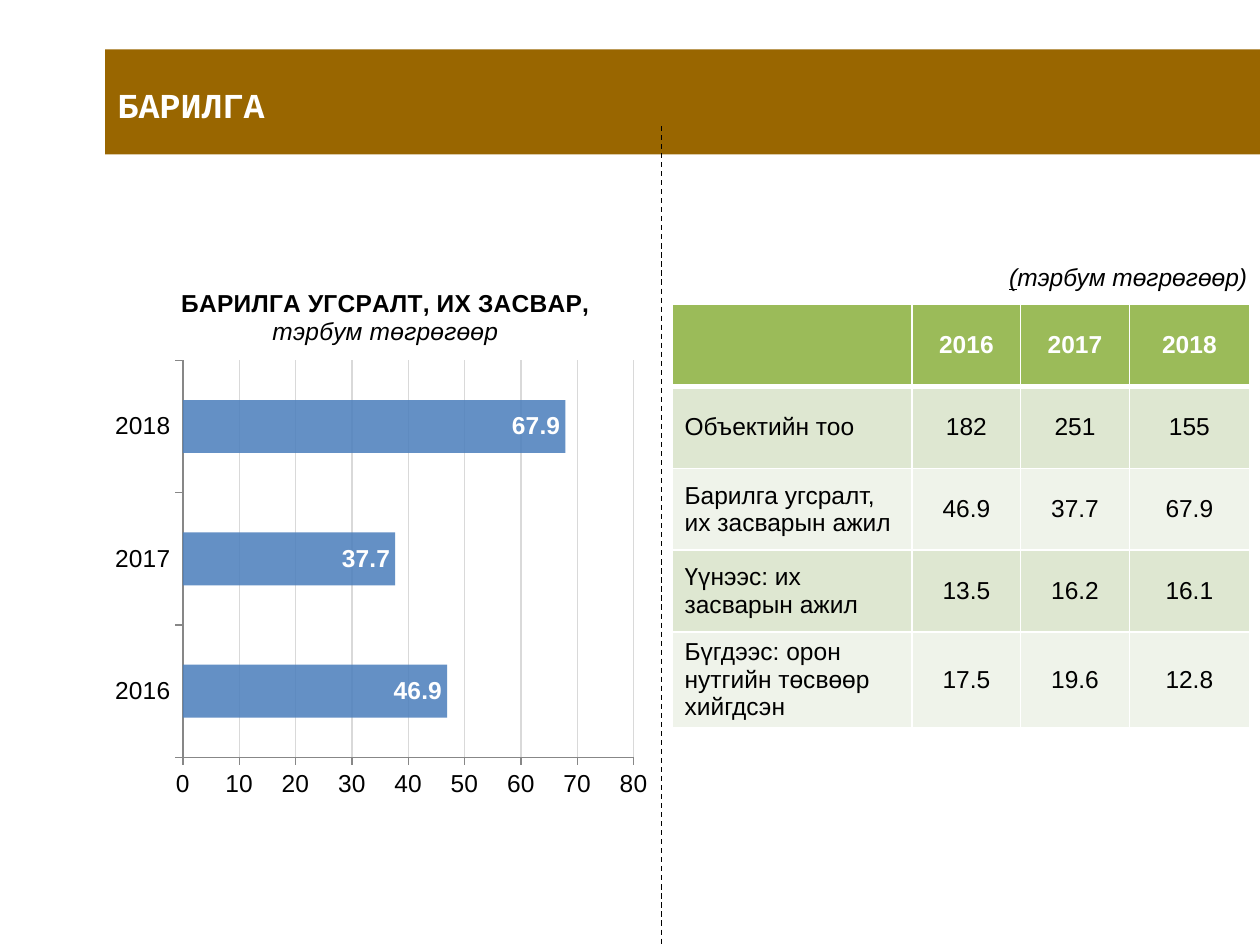
import dataclasses
import pptx
import pptx.chart.data
import pptx.dml.color
import pptx.enum.chart
import pptx.enum.dml
import pptx.enum.shapes
import pptx.enum.text
import pptx.oxml
import pptx.oxml.ns
import pptx.util

COLS, ROWS = 120, 90
NS = pptx.oxml.ns.nsdecls
ALIGN = pptx.enum.text.PP_ALIGN
ANCHOR = pptx.enum.text.MSO_ANCHOR


@dataclasses.dataclass(frozen=True)
class Theme:
    font: str = "Arial"
    mono: str = "Courier New"
    head: int = 20
    text: int = 14
    ink: str = "000000"
    white: str = "FFFFFF"
    brown: str = "996600"
    green: str = "9BBB59"
    bands: tuple = ("DEE7D1", "EFF3EA")
    blue: str = "4F81BD"
    grid: str = "D9D9D9"
    axis: str = "878787"


T = Theme()


def grid(deck, x, y, w, h):
    dx, dy = deck.slide_width / COLS, deck.slide_height / ROWS
    return [round(v) for v in (x * dx, y * dy, w * dx, h * dy)]


def rgb(code):
    return pptx.dml.color.RGBColor.from_string(code)


def paint(fill, code):
    fill.solid()
    fill.fore_color.rgb = rgb(code)


def style(font, color=T.ink, size=T.text, name=T.font, bold=False, slant=False):
    font.name, font.size = name, pptx.util.Pt(size)
    font.bold, font.italic = bold, slant
    font.color.rgb = rgb(color)


def place(shape, box):
    shape.left, shape.top, shape.width, shape.height = box


def banner(slide, box):
    title = slide.shapes.title
    place(title, box)
    paint(title.fill, T.brown)
    frame = title.text_frame
    frame.text = "БАРИЛГА"
    frame.auto_size = pptx.enum.text.MSO_AUTO_SIZE.NONE
    frame.vertical_anchor = ANCHOR.MIDDLE
    frame.margin_top = pptx.util.Inches(0.09)
    line = frame.paragraphs[0]
    line.alignment = ALIGN.JUSTIFY
    style(line.font, T.white, T.head, T.mono, bold=True)


def units(slide, box):
    body = slide.placeholders[1]
    place(body, box)
    frame = body.text_frame
    frame.vertical_anchor = ANCHOR.BOTTOM
    line = frame.paragraphs[0]
    props = line._p.get_or_add_pPr()
    props.set("marL", "0")
    props.set("indent", "0")
    props.append(pptx.oxml.parse_xml(f"<a:buNone {NS('a')}/>"))
    line.alignment = ALIGN.RIGHT
    line.space_before = pptx.util.Pt(0)
    style(line.font, slant=True)
    for text, under in (("(", True), ("тэрбум төгрөгөөр)", False)):
        run = line.add_run()
        run.text = text
        run.font.underline = under


def layout(node, spot, **parts):
    for old in node.xpath("./c:layout"):
        node.remove(old)
    inner = '<c:layoutTarget val="inner"/>' if "w" in parts else ""
    modes = "".join(f'<c:{key}Mode val="edge"/>' for key in "xy")
    sizes = "".join(f'<c:{key} val="{val}"/>' for key, val in parts.items())
    node.insert(spot, pptx.oxml.parse_xml(
        f"<c:layout {NS('c')}><c:manualLayout>{inner}{modes}{sizes}"
        "</c:manualLayout></c:layout>"))


def bars(slide, box):
    kinds = pptx.enum.chart
    data = pptx.chart.data.CategoryChartData()
    data.categories = ["2016", "2017", "2018"]
    data.add_series("Series 1", (46.9, 37.7, 67.9))
    chart = slide.shapes.add_chart(
        kinds.XL_CHART_TYPE.BAR_CLUSTERED, *box, data).chart
    style(chart.font)
    chart.has_legend = False
    chart.has_title = True
    frame = chart.chart_title.text_frame
    frame.text = "БАРИЛГА УГСРАЛТ, ИХ ЗАСВАР,\nтэрбум төгрөгөөр"
    for line, bold in zip(frame.paragraphs, (True, False)):
        style(line.font, bold=bold, slant=not bold)
    layout(chart.chart_title.element, 1, x=0.13, y=0.04)
    layout(chart.element.xpath(".//c:plotArea")[0], 0,
           x=0.14, y=0.18, w=0.81, h=0.73)

    for axis in (chart.category_axis, chart.value_axis):
        axis.major_tick_mark = kinds.XL_TICK_MARK.OUTSIDE
        axis.minor_tick_mark = kinds.XL_TICK_MARK.NONE
        axis.format.line.color.rgb = rgb(T.axis)
        style(axis.tick_labels.font)
    value = chart.value_axis
    value.minimum_scale, value.maximum_scale, value.major_unit = 0, 80, 10
    value.has_major_gridlines = True
    rule = value.major_gridlines.format.line
    rule.color.rgb, rule.width = rgb(T.grid), pptx.util.Pt(0.75)

    plot = chart.plots[0]
    plot.gap_width = 150
    plot.vary_by_categories = False
    series = plot.series[0]
    paint(series.format.fill, T.blue)
    shade = series.format.fill._xPr.xpath(".//a:srgbClr")[0]
    shade.append(pptx.oxml.parse_xml(f'<a:alpha {NS("a")} val="88000"/>'))
    labels = series.data_labels
    labels.show_value = True
    labels.position = kinds.XL_LABEL_POSITION.INSIDE_END
    style(labels.font, T.white, bold=True)


def border(cell, bottom):
    props = cell._tc.get_or_add_tcPr()
    for spot, side in enumerate("LRTB"):
        width = pptx.util.Pt(bottom if side == "B" else 1)
        props.insert(spot, pptx.oxml.parse_xml(
            f'<a:ln{side} {NS("a")} w="{width}"><a:solidFill>'
            f'<a:srgbClr val="{T.white}"/></a:solidFill></a:ln{side}>'))


def table(slide, box):
    cells = (
        ("", "2016", "2017", "2018"),
        ("Объектийн тоо", "182", "251", "155"),
        ("Барилга угсралт, их засварын ажил", "46.9", "37.7", "67.9"),
        ("Үүнээс: их засварын ажил", "13.5", "16.2", "16.1"),
        ("Бүгдээс: орон нутгийн төсвөөр хийгдсэн", "17.5", "19.6", "12.8"),
    )
    shares = (1.9, 0.86, 0.86, 0.95)
    grid_of = slide.shapes.add_table(len(cells), len(shares), *box).table
    grid_of.horz_banding = False
    for col, share in zip(grid_of.columns, shares):
        col.width = round(box[2] * share / sum(shares))
    for r, row in enumerate(cells):
        head = r == 0
        for c, text in enumerate(row):
            cell = grid_of.cell(r, c)
            cell.text = text
            cell.vertical_anchor = ANCHOR.MIDDLE
            paint(cell.fill, T.green if head else T.bands[(r - 1) % 2])
            border(cell, 3 if head else 1)
            line = cell.text_frame.paragraphs[0]
            line.alignment = ALIGN.CENTER if c else ALIGN.LEFT
            style(line.font, T.white if head else T.ink, bold=head)


def split(slide, box):
    x, y, w, h = box
    line = slide.shapes.add_connector(
        pptx.enum.shapes.MSO_CONNECTOR.STRAIGHT, x, y, x + w, y + h)
    line.line.color.rgb = rgb(T.ink)
    line.line.width = pptx.util.Pt(0.75)
    line.line.dash_style = pptx.enum.dml.MSO_LINE.DASH
    line._element.spPr.append(pptx.oxml.parse_xml(f"<a:effectLst {NS('a')}/>"))


def main():
    deck = pptx.Presentation()
    deck.slide_width, deck.slide_height = pptx.util.Inches(10), pptx.util.Inches(7.5)
    slide = deck.slides.add_slide(deck.slide_layouts[1])
    bars(slide, grid(deck, 10, 25, 53, 51.8))
    units(slide, grid(deck, 64, 20, 56, 8.4))
    table(slide, grid(deck, 64, 29, 55, 39))
    banner(slide, grid(deck, 10, 4.7, 110, 10))
    split(slide, grid(deck, 63, 12, 0, 78))
    deck.save("out.pptx")


if __name__ == "__main__":
    main()
